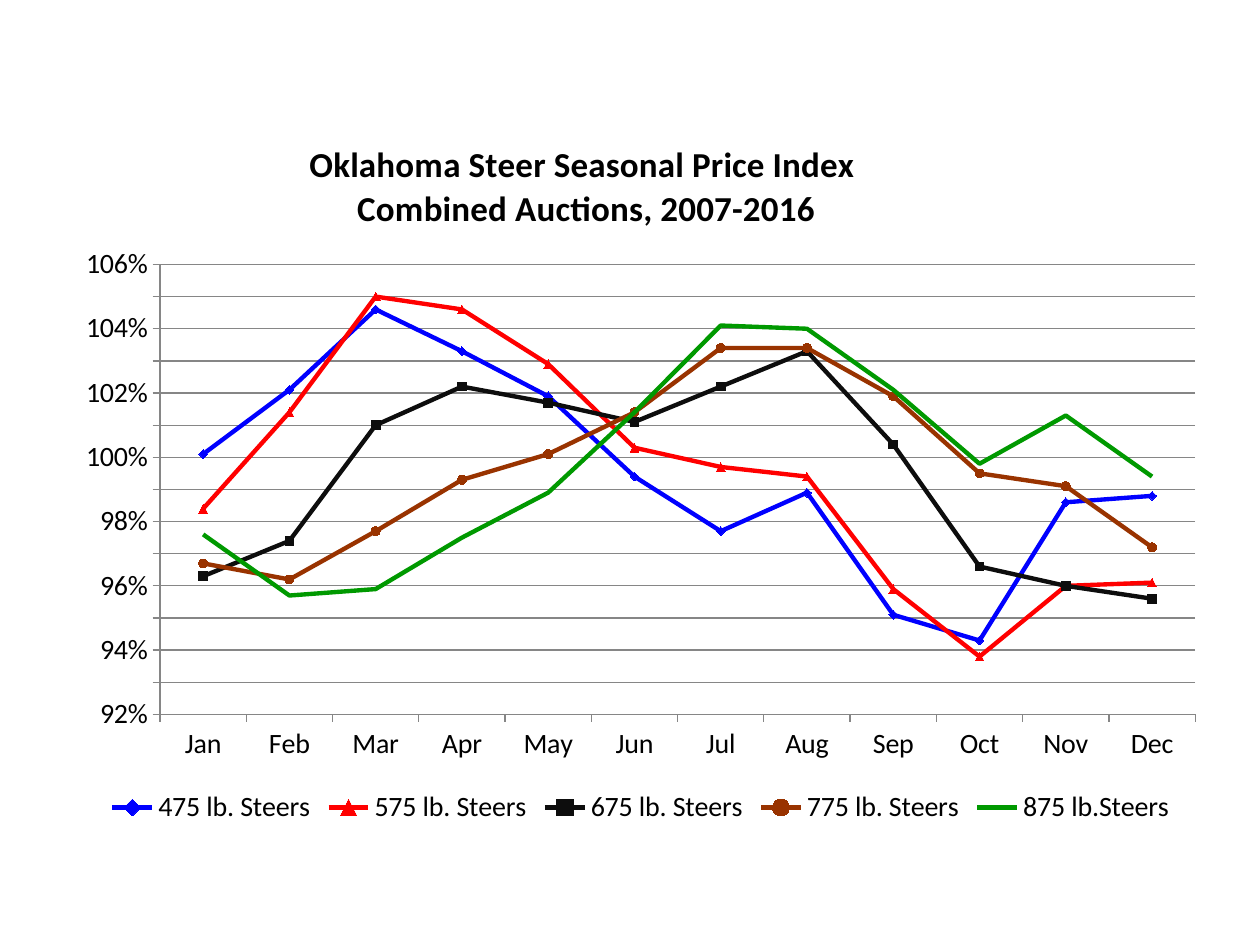
from lxml.etree import SubElement
from pptx import Presentation
from pptx.chart.data import CategoryChartData
from pptx.dml.color import RGBColor
from pptx.enum.chart import XL_CHART_TYPE as Chart, XL_LEGEND_POSITION as Legend
from pptx.enum.chart import XL_MARKER_STYLE as Marker, XL_TICK_MARK as Tick
from pptx.oxml.ns import qn
from pptx.util import Inches, Pt

THEME = {
    "font": "Calibri", "text": "000000", "grid": "868686", "plot": "FFFFFF",
    "title_size": 20, "label_size": 16, "line": 2.5, "thin": 0.75, "marker": 5,
}
SLIDE_W, SLIDE_H = 10, 7.5
CHART_BOX = (0.5, 0.92, 9.17, 5.67)
# Shares of the chart's size
TITLE_AT = {"x": 0.21, "y": 0.03}
PLOT_AT = {"x": 0.084, "y": 0.208, "w": 0.896, "h": 0.63}

TITLE = ["Oklahoma Steer Seasonal Price Index ", "Combined Auctions, 2007-2016"]
MONTHS = ["Jan", "Feb", "Mar", "Apr", "May", "Jun",
          "Jul", "Aug", "Sep", "Oct", "Nov", "Dec"]
# name, line colour, marker colour, marker style, monthly index
STEERS = [
    ("475 lb. Steers", "0000FF", "0000FF", Marker.DIAMOND,
     [1.001, 1.021, 1.046, 1.033, 1.019, 0.994, 0.977, 0.989, 0.951, 0.943, 0.986, 0.988]),
    ("575 lb. Steers", "FF0000", "FF0000", Marker.TRIANGLE,
     [0.984, 1.014, 1.05, 1.046, 1.029, 1.003, 0.997, 0.994, 0.959, 0.938, 0.96, 0.961]),
    ("675 lb. Steers", "0D0D0D", "000000", Marker.SQUARE,
     [0.963, 0.974, 1.01, 1.022, 1.017, 1.011, 1.022, 1.033, 1.004, 0.966, 0.96, 0.956]),
    ("775 lb. Steers", "993300", "993300", Marker.CIRCLE,
     [0.967, 0.962, 0.977, 0.993, 1.001, 1.014, 1.034, 1.034, 1.019, 0.995, 0.991, 0.972]),
    ("875 lb.Steers", "009900", "009900", Marker.NONE,
     [0.976, 0.957, 0.959, 0.975, 0.989, 1.014, 1.041, 1.04, 1.021, 0.998, 1.013, 0.994]),
]


def rgb(key):
    return RGBColor.from_string(THEME.get(key, key))


def set_font(font, size, bold=False):
    font.name, font.size, font.bold = THEME["font"], Pt(THEME[size]), bold
    font.color.rgb = rgb("text")


def set_line(line, color, width):
    line.color.rgb = rgb(color)
    line.width = Pt(THEME[width])


def place(element, index, shares):
    """Give a chart part a manual layout, as its child at the given index."""
    for old in element.findall(qn("c:layout")):
        element.remove(old)
    layout = element.makeelement(qn("c:layout"))
    element.insert(index, layout)
    manual = SubElement(layout, qn("c:manualLayout"))
    if "w" in shares:
        SubElement(manual, qn("c:layoutTarget")).set("val", "inner")
    for axis in "xy":
        SubElement(manual, qn(f"c:{axis}Mode")).set("val", "edge")
    for key, share in shares.items():
        SubElement(manual, qn(f"c:{key}")).set("val", str(share))


def add_title(chart):
    chart.has_title = True
    tf = chart.chart_title.text_frame
    for i, text in enumerate(TITLE):
        p = tf.add_paragraph() if i else tf.paragraphs[0]
        r = p.add_run()
        r.text = text
        set_font(r.font, "title_size", bold=True)
    place(chart.chart_title._element, 1, TITLE_AT)


def style_axes(chart):
    for axis in (chart.category_axis, chart.value_axis):
        axis.major_tick_mark, axis.minor_tick_mark = Tick.OUTSIDE, Tick.NONE
        set_line(axis.format.line, "grid", "thin")
        set_font(axis.tick_labels.font, "label_size")
    values = chart.value_axis
    values.minimum_scale, values.maximum_scale, values.major_unit = 0.92, 1.06, 0.01
    values.tick_labels.number_format = "0%"
    values.tick_labels.number_format_is_linked = False
    values.has_major_gridlines = True
    set_line(values.major_gridlines.format.line, "grid", "thin")


def style_series(chart):
    for series, (_, color, marker_color, style, _) in zip(chart.series, STEERS):
        series.smooth = False
        set_line(series.format.line, color, "line")
        marker = series.marker
        marker.style = style
        if style != Marker.NONE:
            marker.size = THEME["marker"]
            marker.format.fill.solid()
            marker.format.fill.fore_color.rgb = rgb(marker_color)
            set_line(marker.format.line, marker_color, "thin")


def fill_plot(plot_area):
    sp_pr = SubElement(plot_area, qn("c:spPr"))
    fill = SubElement(sp_pr, qn("a:solidFill"))
    SubElement(fill, qn("a:srgbClr")).set("val", THEME["plot"])


def main():
    prs = Presentation()
    prs.slide_width, prs.slide_height = Inches(SLIDE_W), Inches(SLIDE_H)
    slide = prs.slides.add_slide(prs.slide_layouts[6])

    data = CategoryChartData(number_format="0.0%")
    data.categories = MONTHS
    for name, _, _, _, index in STEERS:
        data.add_series(name, index)
    chart = slide.shapes.add_chart(
        Chart.LINE_MARKERS, *map(Inches, CHART_BOX), data).chart
    set_font(chart.font, "label_size")
    chart.plots[0].vary_by_categories = False

    add_title(chart)
    style_axes(chart)
    style_series(chart)
    chart.has_legend = True
    chart.legend.position = Legend.BOTTOM
    chart.legend.include_in_layout = False
    set_font(chart.legend.font, "label_size")

    plot_area = chart._chartSpace.chart.plotArea
    place(plot_area, 0, PLOT_AT)
    fill_plot(plot_area)
    prs.save("out.pptx")


if __name__ == "__main__":
    main()
